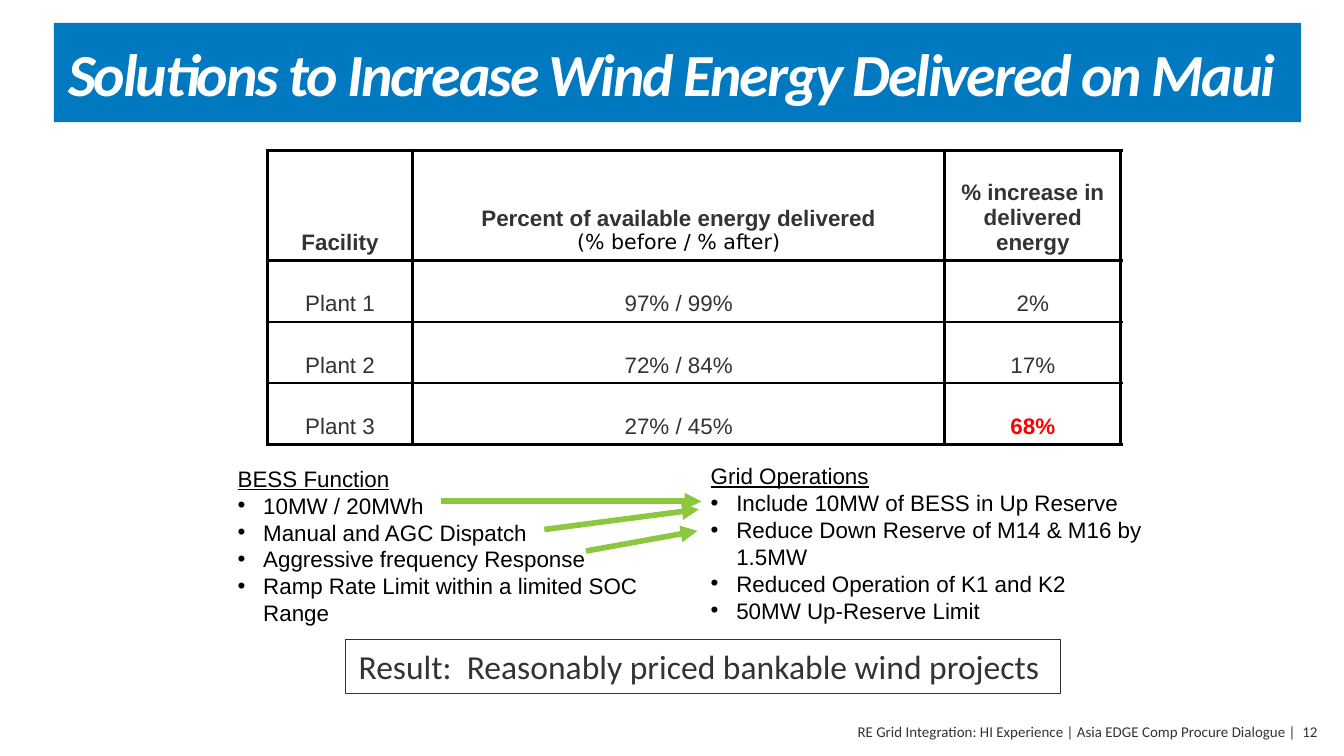
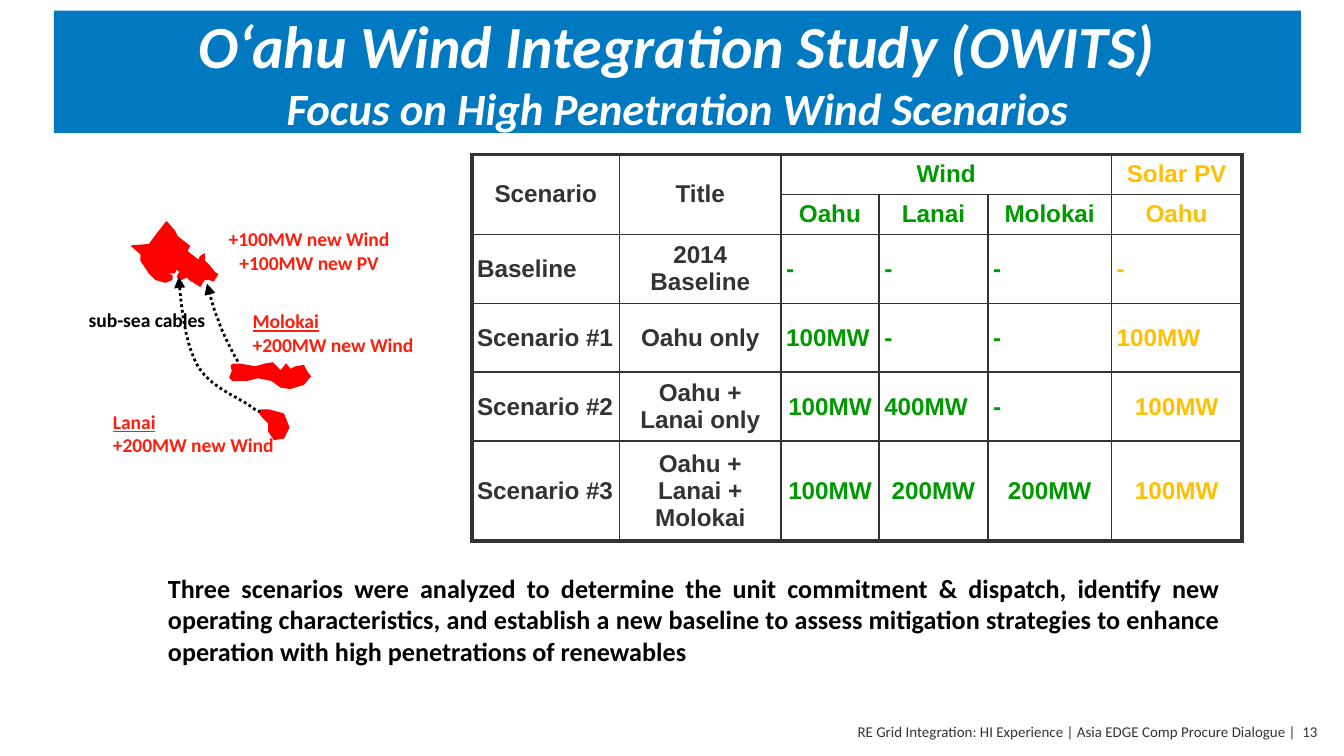
from dataclasses import dataclass

from lxml import etree
from pptx import Presentation
from pptx import util as u
from pptx.dml.color import RGBColor
from pptx.enum import dml, shapes, text
from pptx.oxml.ns import qn

CELL = u.Inches(0.1)  # one grid column or row
COLS, ROWS = 100, 56.25
ALIGN = {"l": text.PP_ALIGN.LEFT, "c": text.PP_ALIGN.CENTER,
         "r": text.PP_ALIGN.RIGHT, "j": text.PP_ALIGN.JUSTIFY}
PAD = (1, 0.5, 1, 0.5)
FLUSH = (0, 0.5, 0, 0.5)


@dataclass(frozen=True)
class Theme:
    band: str = "0079C1"
    white: str = "FFFFFF"
    ink: str = "333333"
    black: str = "000000"
    arrow: str = "8DC63F"
    alert: str = "FF0000"
    label: str = "FD1E0D"
    wind: str = "009900"
    solar: str = "FFC000"
    body_font: str = "Calibri"
    table_font: str = "Arial"
    note_font: str = "DejaVu Sans"
    title: float = 32
    subtitle: float = 24
    result: float = 18
    summary: float = 14
    scenario: float = 13
    normal: float = 12
    note: float = 11
    map_label: float = 10.5
    footer: float = 8


T = Theme()


def emu(n):
    return int(round(n * CELL))


def within(box, x, y, w, h):
    """Box of w by h at (x, y) from the corner of another box."""
    return box[0] + x, box[1] + y, w, h


def rgb(hex_color):
    return RGBColor.from_string(hex_color)


def font(size, color, name=T.body_font, **more):
    return dict(size=u.Pt(size), color=color, name=name, **more)


def write(tf, paras, fmt, align="l", **para_fmt):
    """Fill a frame; a paragraph is a string or a list of (text, changes) runs."""
    for i, para in enumerate(paras):
        p = tf.paragraphs[0] if i == 0 else tf.add_paragraph()
        p.alignment = ALIGN[align]
        for key, value in para_fmt.items():
            setattr(p, key, value)
        for words, changes in [(para, {})] if isinstance(para, str) else para:
            if words == "\n":
                p.add_line_break()
                continue
            r = p.add_run()
            r.text = words
            for key, value in {**fmt, **changes}.items():
                if key == "color":
                    r.font.color.rgb = rgb(value)
                elif key == "spc":
                    r._r.get_or_add_rPr().set("spc", str(value))
                else:
                    setattr(r.font, key, value)


def set_margins(target, pad):
    for side, value in zip(("left", "top", "right", "bottom"), pad):
        setattr(target, f"margin_{side}", emu(value))


def text_box(slide, box, paras, fmt, align="l", pad=PAD):
    tf = slide.shapes.add_textbox(*map(emu, box)).text_frame
    tf.word_wrap = True
    set_margins(tf, pad)
    write(tf, paras, fmt, align)
    return tf


def rect(slide, box, fill=None, line=None):
    sp = slide.shapes.add_shape(shapes.MSO_SHAPE.RECTANGLE, *map(emu, box))
    sp.shadow.inherit = False
    style(sp, fill, line, 0.75)
    sp.text_frame.vertical_anchor = text.MSO_ANCHOR.MIDDLE
    return sp


def style(sp, fill, line, width):
    if fill:
        sp.fill.solid()
        sp.fill.fore_color.rgb = rgb(fill)
    else:
        sp.fill.background()
    if line:
        sp.line.color.rgb = rgb(line)
        sp.line.width = u.Pt(width)
    else:
        sp.line.fill.background()


def add_arrowhead(line):
    etree.SubElement(line._get_or_add_ln(), qn("a:tailEnd"), type="triangle")


def arrow(slide, start, end):
    c = slide.shapes.add_connector(shapes.MSO_CONNECTOR.STRAIGHT,
                                   *map(emu, (*start, *end)))
    c.line.color.rgb = rgb(T.arrow)
    c.line.width = u.Pt(3)
    add_arrowhead(c.line)
    etree.SubElement(c._element.spPr, qn("a:effectLst"))


def outline(slide, box, points, closed):
    pts = [(emu(box[0] + x), emu(box[1] + y)) for x, y in points]
    builder = slide.shapes.build_freeform(*pts[0], scale=1.0)
    builder.add_line_segments(pts[1:], close=closed)
    sp = builder.convert_to_shape()
    sp.shadow.inherit = False
    return sp


def bezier(points, steps=10):
    """Points along a chain of cubic curves."""
    result = [points[0]]
    for i in range(0, len(points) - 1, 3):
        for k in range(1, steps + 1):
            t = k / steps
            weights = ((1 - t) ** 3, 3 * t * (1 - t) ** 2, 3 * t * t * (1 - t), t ** 3)
            result.append(tuple(sum(w * p[axis] for w, p in zip(weights, points[i:i + 4]))
                                for axis in (0, 1)))
    return result


def set_borders(cell, widths, color):
    pr = cell._tc.get_or_add_tcPr()
    for side, width in zip("LRTB", widths):
        ln = etree.SubElement(pr, qn(f"a:ln{side}"), w=str(int(u.Pt(width))))
        fill = etree.SubElement(ln, qn("a:solidFill"))
        etree.SubElement(fill, qn("a:srgbClr"), val=color)


def grid_table(slide, box, col_shares, row_shares, v_lines, h_lines, line_color,
               cells, pad, anchor, merges=()):
    """Table of (paragraphs, format, alignment) cells with a width for each rule."""
    tbl = slide.shapes.add_table(len(row_shares), len(col_shares), *map(emu, box)).table
    tbl.first_row = tbl.horz_banding = False
    for col, share in zip(tbl.columns, col_shares):
        col.width = emu(box[2] * share / sum(col_shares))
    for row, share in zip(tbl.rows, row_shares):
        row.height = emu(box[3] * share / sum(row_shares))
    for r, row in enumerate(cells):
        for c, content in enumerate(row):
            cell = tbl.cell(r, c)
            set_borders(cell, v_lines[c:c + 2] + h_lines[r:r + 2], line_color)
            cell.fill.background()
            cell.vertical_anchor = anchor
            set_margins(cell, pad)
            if content:
                write(cell.text_frame, *content)
    for first, last in merges:
        tbl.cell(*first).merge(tbl.cell(*last))


def new_slide(prs, number, title_box, title_runs):
    """Blank slide with the title band and the footer."""
    slide = prs.slides.add_slide(prs.slide_layouts[6])
    text_box(slide, (60.2, 53.3, 38.9, 2.4),
             [f"RE Grid Integration: HI Experience | Asia EDGE Comp Procure Dialogue |  {number}"],
             font(T.footer, T.ink), "r")
    tf = rect(slide, title_box, fill=T.band).text_frame
    tf.word_wrap = True
    write(tf, [title_runs], font(T.title, T.white, bold=True, italic=True), "c",
          space_before=u.Pt(6), space_after=u.Pt(6))
    return slide


def delivery_table(slide, box):
    plain = font(T.normal, T.ink, T.table_font)
    head = {**plain, "bold": True}
    note = font(T.note, T.black, T.note_font, bold=False)
    plants = [("Plant 1", "97% / 99%", "2%"), ("Plant 2", "72% / 84%", "17%"),
              ("Plant 3", "27% / 45%", "68%")]
    cells = [[(["Facility"], head, "c"),
              ([[("Percent of available energy delivered", {}), ("\n", {}),
                 ("(% before / % after)", note)]], head, "c"),
              (["% increase in delivered energy"], head, "c")]]
    cells += [[([value], plain, "c") for value in plant] for plant in plants]
    cells[-1][-1] = (["68%"], {**head, "color": T.alert}, "c")
    grid_table(slide, box, (1.08, 3.96, 1.31), (0.82, 0.46, 0.46, 0.46),
               [2] * 4, [2, 2, 1, 1, 2], T.black, cells,
               (0.7, 0.4, 0.7, 0.4), text.MSO_ANCHOR.BOTTOM)


def bullet_list(slide, box, heading, items):
    tf = text_box(slide, box, [[(heading, {"underline": True})], *items],
                  font(T.normal, T.black, T.table_font))
    for i, p in enumerate(tf.paragraphs):
        pr = p._p.get_or_add_pPr()
        pr.set("marL", str(emu(1.9)))
        pr.set("indent", str(-emu(1.9)))
        if i:
            etree.SubElement(pr, qn("a:buFont"), typeface=T.table_font)
            etree.SubElement(pr, qn("a:buChar"), char="•")


def functions_to_operations(slide, box):
    bullet_list(slide, within(box, 0, 0.2, 32.3, 13.1), "BESS Function",
                ["10MW / 20MWh", "Manual and AGC Dispatch",
                 "Aggressive frequency Response",
                 "Ramp Rate Limit within a limited SOC Range"])
    bullet_list(slide, within(box, 35.2, 0, 37.3, 13.1), "Grid Operations",
                ["Include 10MW of BESS in Up Reserve",
                 "Reduce Down Reserve of M14 & M16 by 1.5MW",
                 "Reduced Operation of K1 and K2", "50MW Up-Reserve Limit"])
    for x1, y1, x2, y2 in ((16.1, 3.4, 35.5, 3.4), (23.8, 5.5, 35.3, 4),
                           (26.9, 7.1, 35.2, 5.6)):
        arrow(slide, within(box, x1, y1, 0, 0)[:2], within(box, x2, y2, 0, 0)[:2])


def result_box(slide, box):
    tf = rect(slide, box, line=T.ink).text_frame
    tf.word_wrap = False
    write(tf, ["Result:  Reasonably priced bankable wind projects"],
          font(T.result, T.ink))


OAHU = [(3.8, 2.3), (5.1, 2.2), (5.7, 1.4), (6.4, 0.5), (7, 1.2), (7.2, 1.6), (7.7, 2),
        (8.1, 2.3), (7.9, 2.7), (8.3, 3), (8.8, 3.4), (8.9, 3.1), (9.2, 2.9), (9.2, 3.4),
        (9.6, 3.8), (10, 4.3), (10.2, 4.4), (9.9, 4.9), (9.6, 4.8), (9.2, 4.8), (8.9, 5.3),
        (8.1, 4.8), (7.9, 4.6), (7.5, 4.8), (7.2, 4.6), (7.4, 4.2), (7.1, 4), (7, 4.3),
        (6.3, 4.3), (6.8, 4.5), (6.8, 4.8), (6.3, 5), (5.6, 4.8), (5.1, 4.3), (4.7, 3.7),
        (4.5, 3.4), (4.5, 2.9)]
MOLOKAI = [(11.4, 11.1), (11.2, 11.2), (11.3, 11.6), (11.1, 12.1), (11.3, 12.3),
           (12.4, 12.3), (13.2, 12.1), (14.2, 12.3), (14.9, 12.8), (15.6, 12.9),
           (16.6, 12.6), (17.1, 12), (16.8, 11.6), (16.6, 11.2), (16, 11.3), (15.6, 11.5),
           (15.3, 11.1), (14.9, 11.6), (14.3, 11), (13.7, 11.1), (13, 11.3), (11.9, 11.1)]
LANAI = [(13.5, 14.5), (14, 14.5), (15.1, 14.8), (15.5, 15.8), (15.1, 16.6), (14.4, 16.7),
         (14, 16.1), (14, 15.5), (13.5, 15), (13.3, 14.7)]
LANAI_CABLE = [(13.3, 14.5), (13.3, 14.6), (13.4, 14.8), (12.6, 14.2), (11.8, 13.6),
               (9.6, 12.8), (8.7, 11.2), (7.8, 9.6), (7.5, 7.1), (7.3, 4.6)]
MOLOKAI_CABLE = [(11.7, 10.9), (11.4, 10.4), (10.5, 8.7), (10.2, 7.7), (9.8, 6.8),
                 (9.6, 5.7), (9.4, 5.1)]


def island_map(slide, box):
    for island in (OAHU, MOLOKAI, LANAI):
        style(outline(slide, box, island, True), T.alert, T.alert, 0.63)
    for cable in (LANAI_CABLE, MOLOKAI_CABLE):
        sp = outline(slide, box, bezier(cable), False)
        style(sp, None, T.black, 1.5)
        sp.line.dash_style = dml.MSO_LINE.ROUND_DOT
        add_arrowhead(sp.line)
    under = {"underline": True}
    wind = "+200MW new Wind"
    for part, paras, color, align in (
            ((2.4, 14, 14.9, 7.5), [[("Lanai", under)], wind], T.label, "l"),
            ((0.6, 6.4, 9.6, 7.5), ["sub-sea cables"], T.black, "l"),
            ((12.8, 6.5, 16.2, 5.4), [[("Molokai", under), ("\n", {}), (wind, {})]],
             T.label, "l"),
            ((6, 0.4, 22, 5.4), ["+100MW new Wind", "+100MW new PV"], T.label, "c")):
        text_box(slide, within(box, *part), paras,
                 font(T.map_label, color, bold=True), align, FLUSH)


def scenario_table(slide, box):
    colors = [T.ink] * 2 + [T.wind] * 3 + [T.solar]
    rows = [("cccccc", ("Scenario", "Title", "Wind", None, None, "Solar PV")),
            ("cccccc", (None, None, "Oahu", "Lanai", "Molokai", "Oahu")),
            ("lcllll", ("Baseline", "2014 Baseline", "-", "-", "-", "-")),
            ("lcllll", ("Scenario #1", "Oahu only", "100MW", "-", "-", "100MW")),
            ("lccllc", ("Scenario #2", "Oahu + Lanai only", "100MW", "400MW", "-", "100MW")),
            ("lccccc", ("Scenario #3", "Oahu + Lanai + Molokai",
                        "100MW", "200MW", "200MW", "100MW"))]
    cells = [[value and ([value], font(T.scenario, color, T.table_font, bold=True), align)
              for value, color, align in zip(values, colors, aligns)]
             for aligns, values in rows]
    lines = [2.25] + [1] * 5 + [2.25]
    grid_table(slide, box, (1.1, 1.2, 0.73, 0.81, 0.92, 0.97),
               (0.29, 0.29, 0.51, 0.51, 0.51, 0.74), lines, lines, T.ink, cells,
               (0.4,) * 4, text.MSO_ANCHOR.MIDDLE,
               [((0, 0), (1, 0)), ((0, 1), (1, 1)), ((0, 2), (0, 4))])


def solutions_slide(prs):
    slide = new_slide(prs, 12, (4, 1.7, 92.8, 7.4),
                      [("Solutions to Increase Wind Energy Delivered on Maui ", {"spc": -113})])
    functions_to_operations(slide, (16.7, 33.9, 72.5, 13.3))
    delivery_table(slide, (19.9, 11.2, 63.5, 21.9))
    result_box(slide, (25.7, 47.6, 53.2, 4))


def study_slide(prs):
    slide = new_slide(prs, 13, (4, 0.8, 92.8, 9.1),
                      [("O‘ahu Wind Integration Study (OWITS)", {}), ("\n", {}),
                       ("Focus on High Penetration Wind Scenarios",
                        {"size": u.Pt(T.subtitle)})])
    island_map(slide, (6, 16, 29, 22))
    text_box(slide, (12.5, 42.1, 78.3, 8.1),
             ["Three scenarios were analyzed to determine the unit commitment & dispatch, "
              "identify new operating characteristics, and establish a new baseline to assess "
              "mitigation strategies to enhance operation with high penetrations of renewables"],
             font(T.summary, T.black, bold=True), "j", FLUSH)
    scenario_table(slide, (35.1, 11.5, 57.3, 28.6))


def main():
    prs = Presentation()
    prs.slide_width = emu(COLS)
    prs.slide_height = emu(ROWS)
    solutions_slide(prs)
    study_slide(prs)
    prs.save("out.pptx")


if __name__ == "__main__":
    main()
